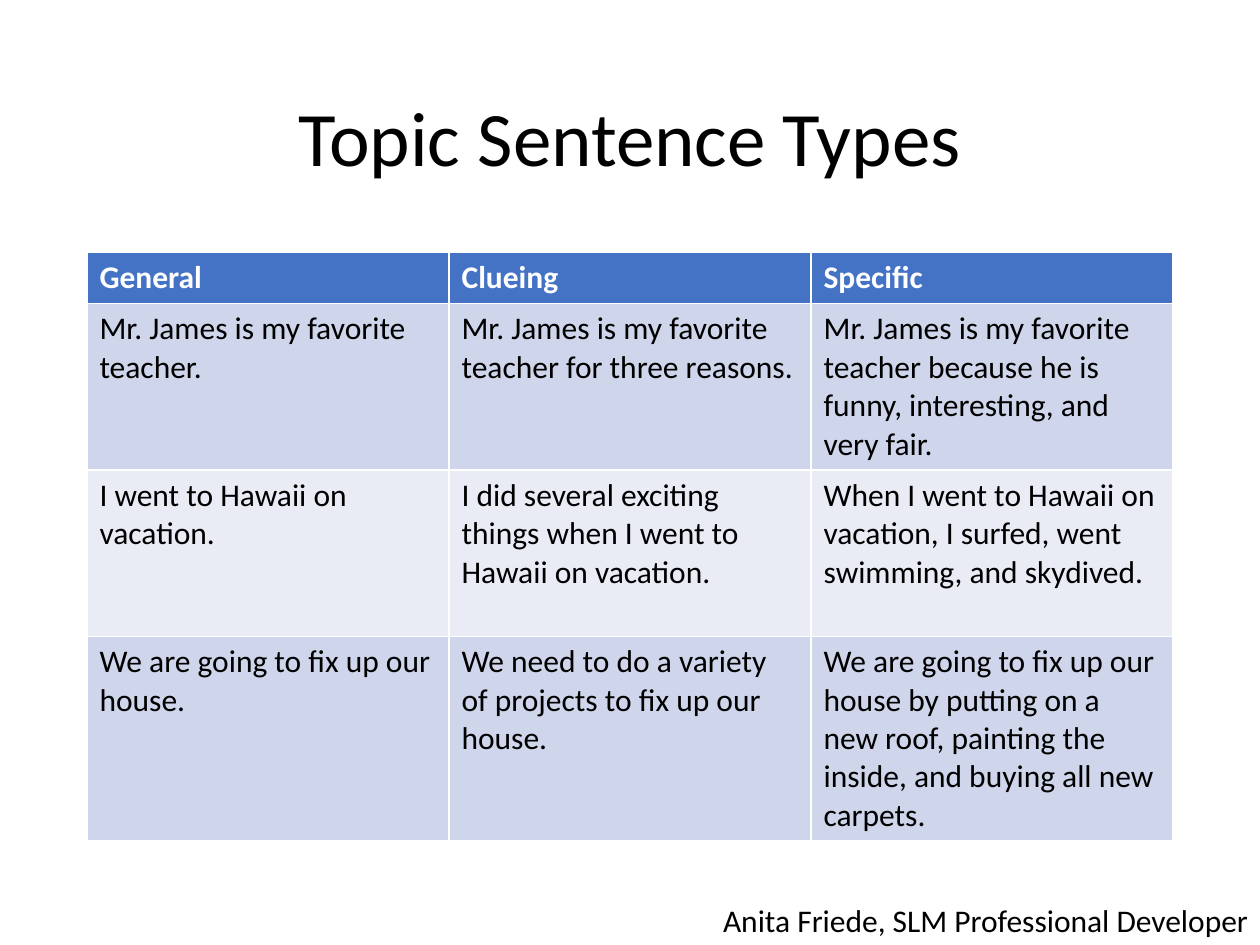
from pptx import Presentation
from pptx.dml.color import RGBColor
from pptx.enum.text import MSO_ANCHOR, PP_ALIGN
from pptx.util import Inches, Pt

TITLE = "Topic Sentence Types"
CREDIT = "Anita Friede, SLM Professional Developer"
ROWS = [
    ("General", "Clueing", "Specific"),
    ("Mr. James is my favorite teacher.",
     "Mr. James is my favorite teacher for three reasons.",
     "Mr. James is my favorite teacher because he is funny, interesting, "
     "and very fair."),
    ("I went to Hawaii on vacation.",
     "I did several exciting things when I went to Hawaii on vacation.",
     "When I went to Hawaii on vacation, I surfed, went swimming, "
     "and skydived."),
    ("We are going to fix up our house.",
     "We need to do a variety of projects to fix up our house.",
     "We are going to fix up our house by putting on a new roof, "
     "painting the inside, and buying all new carpets."),
]
ROW_HEIGHTS = [0.41, 1.32, 1.32, 1.62]
HEADER_FILL, BAND_FILLS = "4472C4", ("CFD5EA", "E9EBF5")
LEFT, WIDTH = 0.69, 8.62


def style_text(frame, size, color="000000", bold=False):
    for para in frame.paragraphs:
        for span in para.runs:
            span.font.name = "Calibri"
            span.font.size = Pt(size)
            span.font.bold = bold
            span.font.color.rgb = RGBColor.from_string(color)


def add_title(page):
    title = page.shapes.title
    title.left, title.top = Inches(LEFT), Inches(0.4)
    title.width, title.height = Inches(WIDTH), Inches(1.45)
    frame = title.text_frame
    frame.text = TITLE
    frame.vertical_anchor = MSO_ANCHOR.MIDDLE
    frame.paragraphs[0].alignment = PP_ALIGN.CENTER
    frame.paragraphs[0].line_spacing = 0.9
    style_text(frame, 44)


def add_sentence_table(page):
    """Add the table; its default style supplies the white cell borders."""
    table = page.shapes.add_table(
        len(ROWS), len(ROWS[0]), Inches(LEFT), Inches(2),
        Inches(WIDTH), Inches(sum(ROW_HEIGHTS))).table
    for r, (sentences, height) in enumerate(zip(ROWS, ROW_HEIGHTS)):
        table.rows[r].height = Inches(height)
        header = r == 0
        fill = HEADER_FILL if header else BAND_FILLS[(r - 1) % 2]
        for c, sentence in enumerate(sentences):
            cell = table.cell(r, c)
            cell.text_frame.text = sentence
            cell.fill.solid()
            cell.fill.fore_color.rgb = RGBColor.from_string(fill)
            style_text(cell.text_frame, 18,
                       "FFFFFF" if header else "000000", header)


def add_credit(page):
    box = page.shapes.add_textbox(Inches(5.64), Inches(7.1),
                                  Inches(4.8), Inches(0.4))
    box.text_frame.word_wrap = True
    box.text_frame.text = CREDIT
    style_text(box.text_frame, 18)


def main():
    deck = Presentation()
    deck.slide_width, deck.slide_height = Inches(10), Inches(7.5)
    page = deck.slides.add_slide(deck.slide_layouts.get_by_name("Title Only"))
    add_title(page)
    add_sentence_table(page)
    add_credit(page)
    deck.save("out.pptx")


if __name__ == "__main__":
    main()
